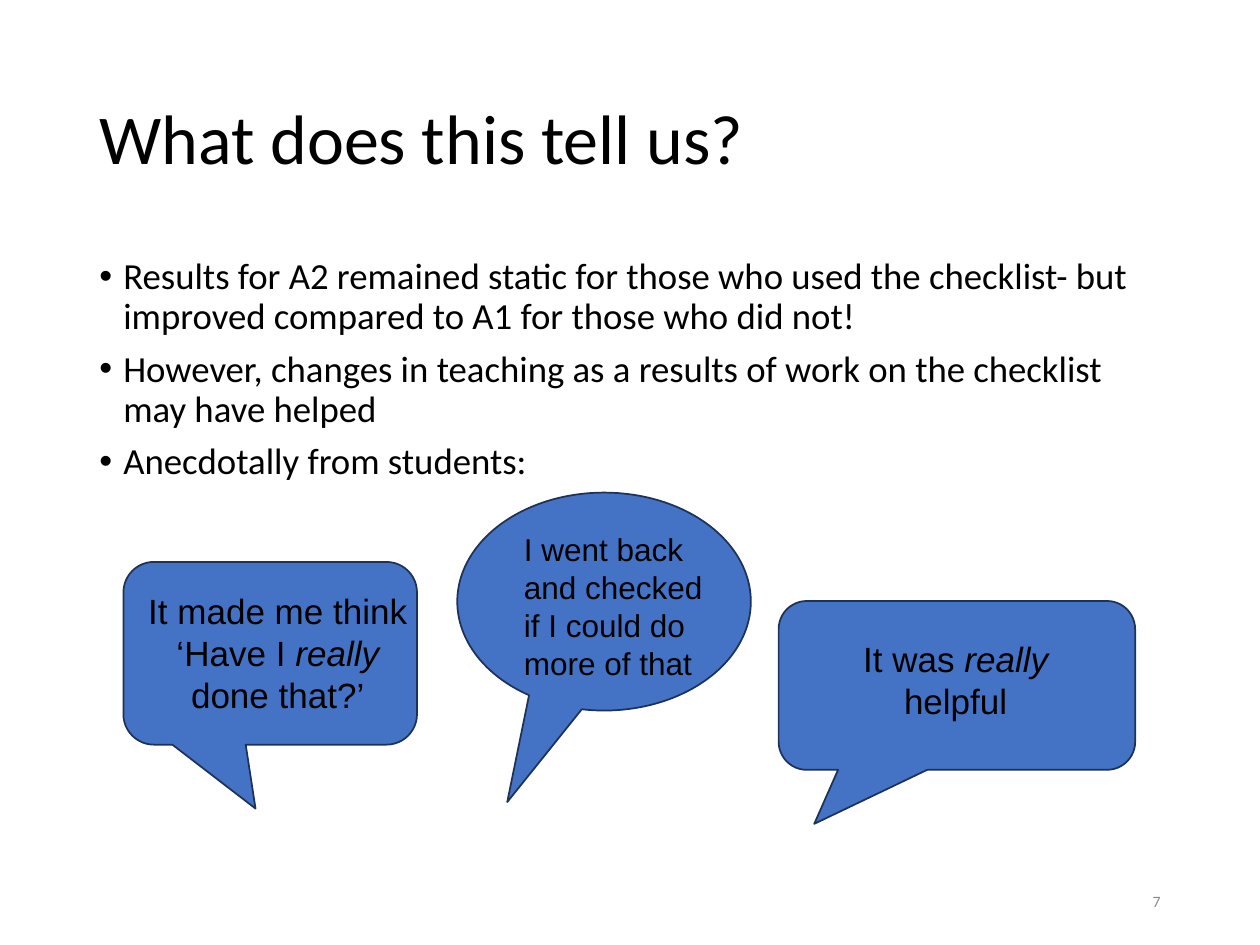
from lxml.etree import SubElement
from pptx import Presentation
from pptx.dml.color import RGBColor
from pptx.enum.shapes import MSO_SHAPE
from pptx.enum.text import MSO_ANCHOR, PP_ALIGN
from pptx.oxml.ns import qn
from pptx.util import Inches, Pt

BLACK = RGBColor(0x00, 0x00, 0x00)
GREY = RGBColor(0x8C, 0x8C, 0x8C)
BLUE = RGBColor(0x44, 0x72, 0xC4)
NAVY = RGBColor(0x1E, 0x32, 0x56)

deck = Presentation()
deck.slide_width, deck.slide_height = Inches(10), Inches(7.5)

# Grid of 100 columns and 75 rows
COLUMN = deck.slide_width / 100
ROW = deck.slide_height / 75


def cells(left, top, width, height):
    """Turn columns and rows into a position and size."""
    return [round(n * unit) for n, unit in
            zip((left, top, width, height), (COLUMN, ROW, COLUMN, ROW))]


def write(paragraph, pieces, font, color=BLACK, **paragraph_format):
    """Fill a paragraph; every second piece is italic."""
    for name, value in paragraph_format.items():
        setattr(paragraph, name, value)
    for index, piece in enumerate(pieces):
        run = paragraph.add_run()
        run.text = piece
        run.font.color.rgb = color
        for name, value in {**font, "italic": index % 2 == 1}.items():
            setattr(run.font, name, value)


slide = deck.slides.add_slide(deck.slide_layouts[5])  # title only

# Title
title = slide.shapes.title
title.left, title.top, title.width, title.height = cells(6.9, 4, 86.2, 14.5)
title.text_frame.vertical_anchor = MSO_ANCHOR.MIDDLE
write(title.text_frame.paragraphs[0], ["What does this tell us?"],
      {"name": "Calibri", "size": Pt(40)},
      alignment=PP_ALIGN.LEFT, line_spacing=0.9)

# Findings
FINDINGS = [
    "Results for A2 remained static for those who used the checklist- but "
    "improved compared to A1 for those who did not!",
    "However, changes in teaching as a results of work on the checklist "
    "may have helped",
    "Anecdotally from students:",
]
findings = slide.shapes.add_textbox(*cells(6.9, 20, 86.2, 47.6)).text_frame
findings.word_wrap = True
for index, finding in enumerate(FINDINGS):
    bullet = findings.add_paragraph() if index else findings.paragraphs[0]
    write(bullet, [finding], {"name": "Calibri", "size": Pt(21)},
          line_spacing=0.9, space_before=Pt(7.5))
    properties = bullet._p.get_or_add_pPr()
    properties.set("marL", str(Inches(0.19)))
    properties.set("indent", str(-Inches(0.19)))
    SubElement(properties, qn("a:buFont")).set("typeface", "Arial")
    SubElement(properties, qn("a:buChar")).set("char", "•")

# Page number
page_number = slide.shapes.add_textbox(*cells(70.6, 69.5, 22.5, 4)).text_frame
page_number.vertical_anchor = MSO_ANCHOR.MIDDLE
page_number.word_wrap = True
write(page_number.paragraphs[0], ["7"], {"name": "Calibri", "size": Pt(9)},
      GREY, alignment=PP_ALIGN.RIGHT)

# Student quotes: bubble, its place, tail tip, text place, size, alignment, words
ROUNDED = MSO_SHAPE.ROUNDED_RECTANGULAR_CALLOUT
OVAL = MSO_SHAPE.OVAL_CALLOUT
QUOTES = [
    (ROUNDED, (9.8, 44.6, 23.3, 14.5), (-0.05, 0.85), (10, 46.3, 24.1, 11.1),
     20, PP_ALIGN.CENTER, ["It made me think ‘Have I ", "really", " done that?’"]),
    (OVAL, (36.3, 39.1, 23.3, 17.3), (-0.33, 0.92), (40.6, 41.6, 17.3, 13.1),
     18, PP_ALIGN.LEFT, ["I went back and checked if I could do more of that"]),
    (ROUNDED, (61.8, 47.7, 28.3, 13.4), (-0.4, 0.82), (63.8, 50.1, 24.1, 7.7),
     20, PP_ALIGN.CENTER, ["It was ", "really", " helpful"]),
]
for outline, place, tail, words_place, size, alignment, words in QUOTES:
    bubble = slide.shapes.add_shape(outline, *cells(*place))
    bubble.shadow.inherit = False
    bubble.fill.solid()
    bubble.fill.fore_color.rgb = BLUE
    bubble.line.color.rgb = NAVY
    bubble.line.width = Pt(1)
    for index, offset in enumerate(tail):
        bubble.adjustments[index] = offset
    quote = slide.shapes.add_textbox(*cells(*words_place)).text_frame
    quote.word_wrap = True
    write(quote.paragraphs[0], words, {"name": "Arial", "size": Pt(size)},
          alignment=alignment)

deck.save("out.pptx")
